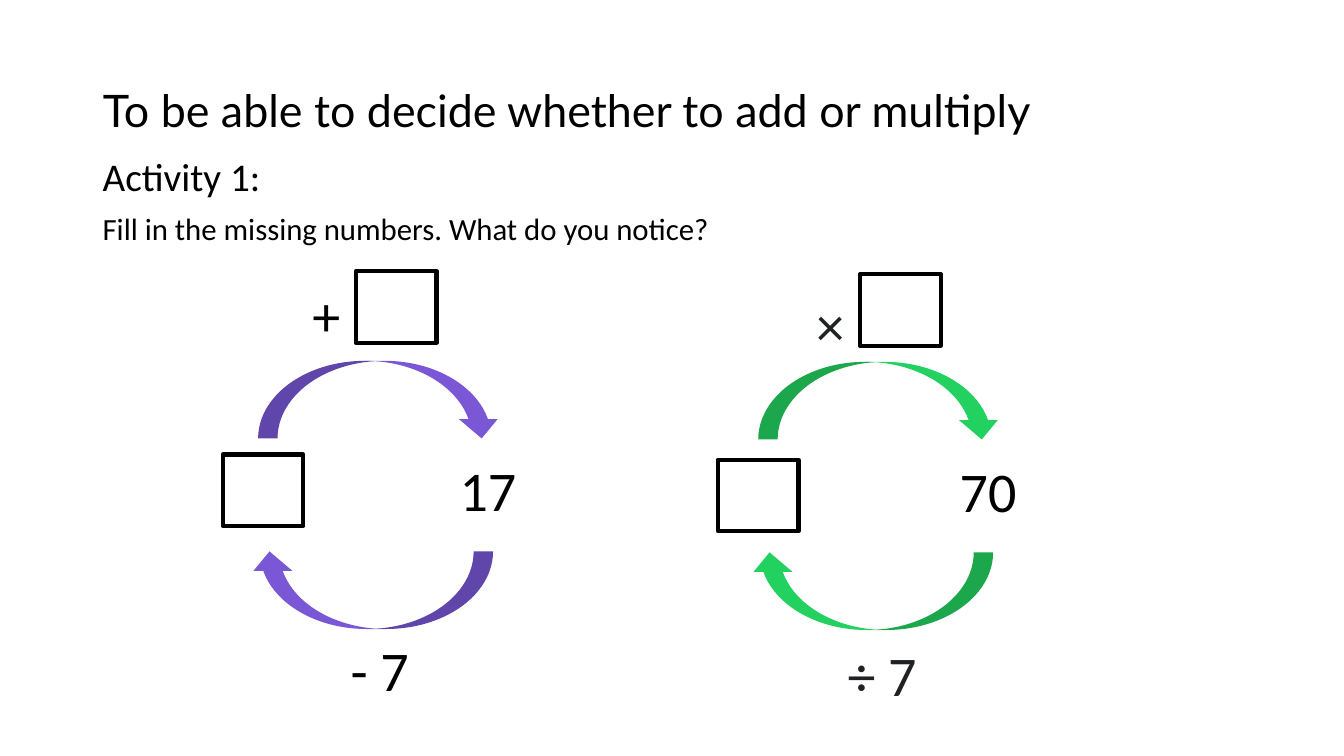
from dataclasses import dataclass

from pptx import Presentation
from pptx.dml.color import RGBColor
from pptx.enum.shapes import MSO_SHAPE as Shape
from pptx.enum.text import MSO_ANCHOR as Anchor, PP_ALIGN as Align
from pptx.util import Emu, Pt

PX = 9144  # EMU in one px, 100 px to the inch
TITLE_ONLY = 5


@dataclass(frozen=True)
class Theme:
    ink: str = "000000"
    soft_ink: str = "202124"
    purple: str = "7957D5"
    green: str = "23D160"
    heading_font: str = "Lato"
    body_font: str = "Calibri"
    title_size: int = 32
    activity_size: int = 28
    task_size: int = 22
    number_size: int = 40
    box_line: int = 3


@dataclass(frozen=True)
class Loop:
    """One pair of inverse operations; positions are (left, top) in px."""
    colour: str
    sign_colour: str
    arrow: tuple
    result: str
    sign: str
    sign_at: tuple
    inverse: str
    inverse_at: tuple
    operand_at: tuple
    start_at: tuple


class Worksheet:
    def __init__(self, deck, theme):
        self.theme = theme
        self.page = deck.slides.add_slide(deck.slide_layouts[TITLE_ONLY])

    def place(self, *lengths):
        return [Emu(length * PX) for length in lengths]

    def add_text_run(self, para, text, size, colour, font):
        para.alignment = Align.LEFT
        run = para.add_run()
        run.text = text
        run.font.size = Pt(size)
        run.font.name = font
        run.font.color.rgb = RGBColor.from_string(colour)

    def title(self, text, *area):
        box = self.page.shapes.title
        box.left, box.top, box.width, box.height = self.place(*area)
        box.text_frame.vertical_anchor = Anchor.MIDDLE
        para = box.text_frame.paragraphs[0]
        para.line_spacing = 0.9
        self.add_text_run(para, text, self.theme.title_size, self.theme.ink,
                          self.theme.heading_font)

    def text(self, lines, area, colour, line_spacing=1.0, gap=0):
        """Add (text, size) lines, one paragraph each."""
        frame = self.page.shapes.add_textbox(*self.place(*area)).text_frame
        frame.word_wrap = True
        for index, (text, size) in enumerate(lines):
            para = frame.add_paragraph() if index else frame.paragraphs[0]
            para.line_spacing = line_spacing
            para.space_before = Pt(gap if index else 0)
            self.add_text_run(para, text, size, colour, self.theme.body_font)

    def number(self, text, left, top, colour):
        self.text([(text, self.theme.number_size)], (left, top, 117, 77), colour)

    def answer_box(self, left, top):
        box = self.page.shapes.add_shape(Shape.RECTANGLE, *self.place(left, top, 80, 71))
        box.shadow.inherit = False
        box.fill.background()
        box.line.color.rgb = RGBColor.from_string(self.theme.ink)
        box.line.width = Pt(self.theme.box_line)

    def arrow(self, left, top, colour, rotation=0):
        arrow = self.page.shapes.add_shape(
            Shape.CURVED_DOWN_ARROW, *self.place(left, top, 241, 77))
        arrow.shadow.inherit = False
        arrow.rotation = rotation
        arrow.fill.solid()
        arrow.fill.fore_color.rgb = RGBColor.from_string(colour)
        arrow.line.fill.background()

    def loop(self, loop):
        left, top = loop.arrow
        # Arrows out and back
        self.arrow(left, top, loop.colour)
        self.arrow(left - 8, top + 189, loop.colour, rotation=180)
        # Known numbers and operations
        self.number(loop.result, left + 190, top + 89, self.theme.ink)
        self.number(loop.sign, *loop.sign_at, loop.sign_colour)
        self.number(loop.inverse, *loop.inverse_at, loop.sign_colour)
        # Boxes for the missing numbers
        self.answer_box(*loop.operand_at)
        self.answer_box(*loop.start_at)


def main():
    deck = Presentation()
    deck.slide_width, deck.slide_height = Emu(1333 * PX), Emu(750 * PX)
    theme = Theme()
    sheet = Worksheet(deck, theme)

    # Heading and task
    sheet.title("To be able to decide whether to add or multiply", 92, 40, 960, 145)
    sheet.text(
        [("Activity 1:", theme.activity_size),
         ("Fill in the missing numbers. What do you notice?", theme.task_size)],
        (92, 151, 1170, 112), theme.ink, line_spacing=0.9, gap=10)

    # Adding loop, then multiplying loop
    sheet.loop(Loop(theme.purple, theme.ink, arrow=(256, 358), result="17",
                    sign="+", sign_at=(300, 273), inverse="- 7", inverse_at=(338, 626),
                    operand_at=(353, 269), start_at=(221, 451)))
    sheet.loop(Loop(theme.green, theme.soft_ink, arrow=(752, 359), result="70",
                    sign="×", sign_at=(800, 283), inverse="÷ 7", inverse_at=(831, 631),
                    operand_at=(853, 272), start_at=(712, 456)))

    deck.save("out.pptx")


if __name__ == "__main__":
    main()
